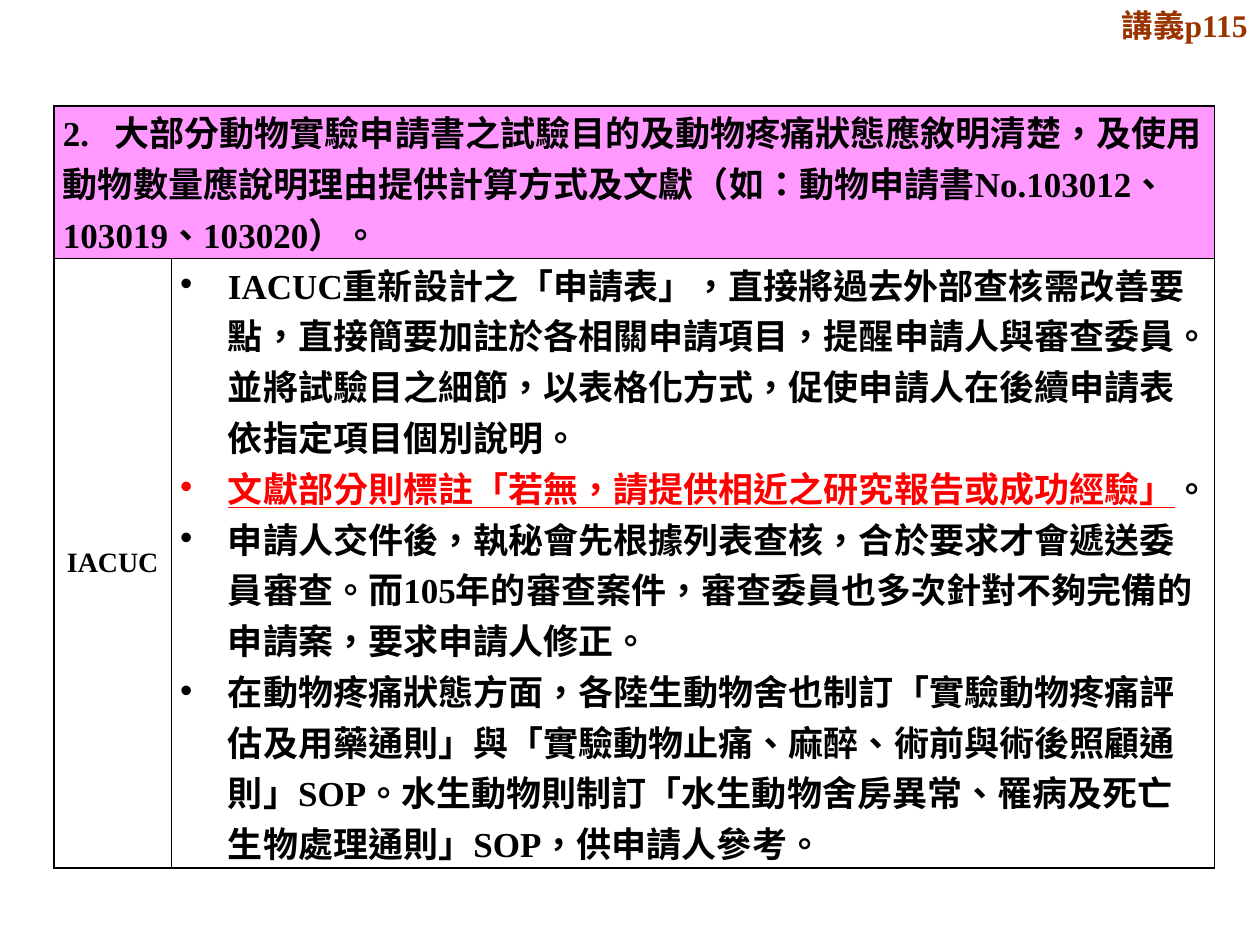
import pptx
import pptx.util
import pptx.dml.color
import pptx.enum.lang
import pptx.enum.text
import pptx.oxml.ns
from lxml import etree

PAGE_REFERENCE = "講義p115"
FINDING = "2.\t大部分動物實驗申請書之試驗目的及動物疼痛狀態應敘明清楚，及使用動物數量應說明理由提供計算方式及文獻（如：動物申請書No.103012、103019、103020）。"
RESPONDER = "IACUC"
RESPONSES = [
    [("IACUC重新設計之「申請表」，直接將過去外部查核需改善要點，直接簡要加註於各相關申請項目，提醒申請人與審查委員。並將試驗目之細節，以表格化方式，促使申請人在後續申請表依指定項目個別說明。", "ink")],
    [("文獻部分則標註「若無，請提供相近之研究報告或成功經驗」", "alert"), ("。", "ink")],
    [("申請人交件後，執秘會先根據列表查核，合於要求才會遞送委員審查。而105年的審查案件，審查委員也多次針對不夠完備的申請案，要求申請人修正。", "ink")],
    [("在動物疼痛狀態方面，各陸生動物舍也制訂「實驗動物疼痛評估及用藥通則」與「實驗動物止痛、麻醉、術前與術後照顧通則」SOP。水生動物則制訂「水生動物舍房異常、罹病及死亡生物處理通則」SOP，供申請人參考。", "ink")],
]

THEME = {
    "font": "Times New Roman",
    "ink": "000000", "alert": "FF0000", "reference": "993300",
    "finding_fill": "FF99FF", "response_fill": "FFFFFF",
    "body": 20, "label": 16, "page": 18, "border": 1,
}
SLIDE = (10, 7.5)
TABLE_ORIGIN = (0.43, 0.84)
COLUMNS = (0.93, 8.28)
ROWS = (1.21, 4.84)
REFERENCE_SIZE = (2.33, 0.4)
SIDE_MARGIN = 0.07
NUMBER_TAB = 0.41
BULLET_INDENT = 0.38

inches = pptx.util.Inches
ALIGN = pptx.enum.text.PP_ALIGN
ANCHOR = pptx.enum.text.MSO_ANCHOR


def colour(name):
    return pptx.dml.color.RGBColor.from_string(THEME[name])


def child(parent, tag, **attributes):
    return etree.SubElement(parent, pptx.oxml.ns.qn(tag), attributes)


def write(paragraph, text, size, tone="ink"):
    run = paragraph.add_run()
    run.text = text
    run.font.name = THEME["font"]
    run.font.size = pptx.util.Pt(THEME[size])
    run.font.bold = True
    run.font.underline = tone == "alert"
    run.font.color.rgb = colour(tone)
    run.font.language_id = pptx.enum.lang.MSO_LANGUAGE_ID.TRADITIONAL_CHINESE


def set_number_tab(paragraph):
    stops = child(paragraph._p.get_or_add_pPr(), "a:tabLst")
    child(stops, "a:tab", pos=str(inches(NUMBER_TAB)), algn="l")


def set_bullet(paragraph):
    properties = paragraph._p.get_or_add_pPr()
    properties.set("marL", str(inches(BULLET_INDENT)))
    properties.set("indent", str(-inches(BULLET_INDENT)))
    child(properties, "a:buFont", typeface="Arial")
    child(properties, "a:buChar", char="•")


def style_cell(cell, fill):
    cell.margin_left = cell.margin_right = inches(SIDE_MARGIN)
    cell.margin_top = cell.margin_bottom = 0
    for side in ("a:lnL", "a:lnR", "a:lnT", "a:lnB"):
        edge = child(cell._tc.get_or_add_tcPr(), side, w=str(pptx.util.Pt(THEME["border"])))
        child(child(edge, "a:solidFill"), "a:srgbClr", val=THEME["ink"])
    cell.fill.solid()
    cell.fill.fore_color.rgb = colour(fill)


def add_reference(slide):
    width, height = REFERENCE_SIZE
    box = slide.shapes.add_textbox(
        inches(SLIDE[0] - width), 0, inches(width), inches(height))
    frame = box.text_frame
    frame.word_wrap = True
    frame.vertical_anchor = ANCHOR.MIDDLE
    frame.paragraphs[0].alignment = ALIGN.RIGHT
    write(frame.paragraphs[0], PAGE_REFERENCE, "page", "reference")


def add_review(slide):
    bounds = [inches(length) for length in (*TABLE_ORIGIN, sum(COLUMNS), sum(ROWS))]
    review = slide.shapes.add_table(len(ROWS), len(COLUMNS), *bounds).table
    review.first_row = review.horz_banding = False
    for column, width in zip(review.columns, COLUMNS):
        column.width = inches(width)
    for row, height, fill in zip(review.rows, ROWS, ("finding_fill", "response_fill")):
        row.height = inches(height)
        for cell in row.cells:
            style_cell(cell, fill)

    finding = review.cell(0, 0)
    finding.merge(review.cell(0, 1))
    heading = finding.text_frame.paragraphs[0]
    set_number_tab(heading)
    write(heading, FINDING, "body")

    responder = review.cell(1, 0)
    responder.vertical_anchor = ANCHOR.MIDDLE
    label = responder.text_frame.paragraphs[0]
    label.alignment = ALIGN.CENTER
    write(label, RESPONDER, "label")

    answers = review.cell(1, 1).text_frame
    for number, response in enumerate(RESPONSES):
        paragraph = answers.add_paragraph() if number else answers.paragraphs[0]
        set_bullet(paragraph)
        for text, tone in response:
            write(paragraph, text, "body", tone)


def main():
    deck = pptx.Presentation()
    deck.slide_width, deck.slide_height = map(inches, SLIDE)
    slide = deck.slides.add_slide(deck.slide_layouts[6])
    add_reference(slide)
    add_review(slide)
    deck.save("out.pptx")


if __name__ == "__main__":
    main()
